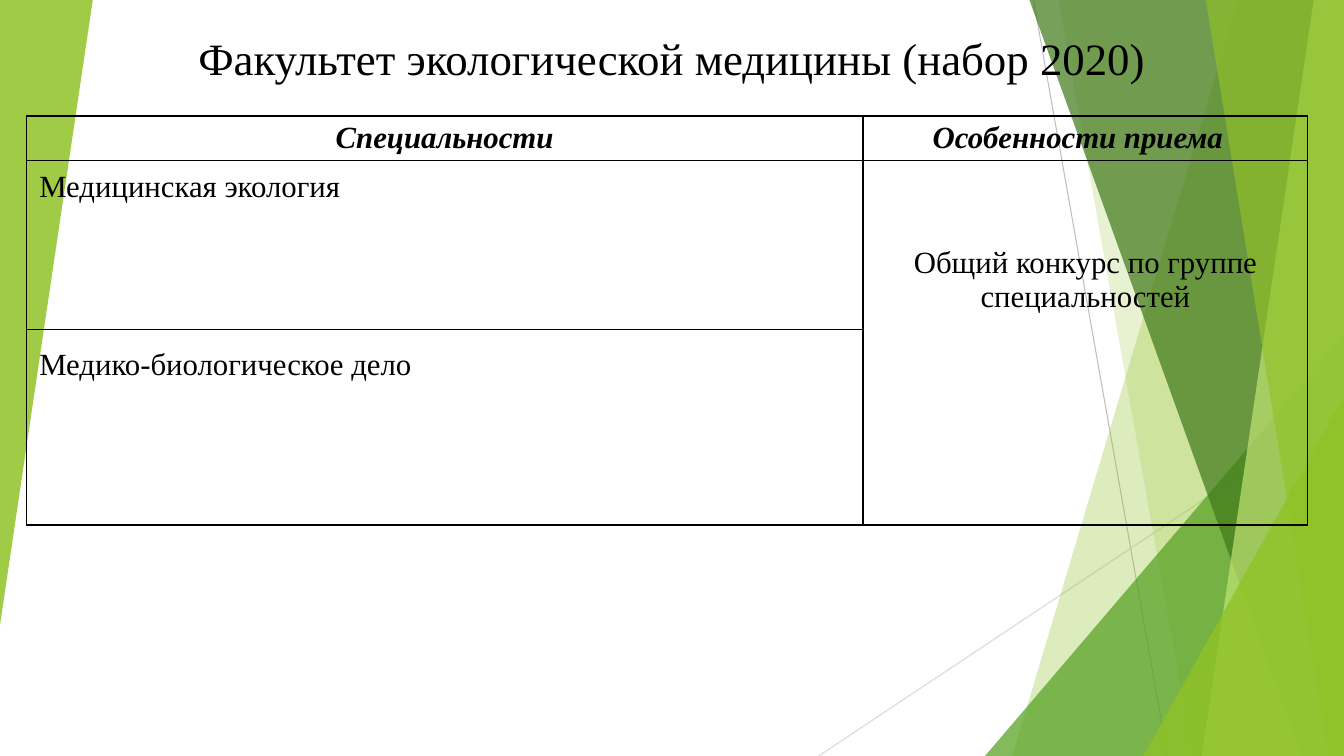
from dataclasses import dataclass

from lxml.etree import SubElement
from pptx import Presentation
from pptx.dml.color import RGBColor
from pptx.enum.shapes import MSO_CONNECTOR, MSO_SHAPE
from pptx.enum.text import MSO_ANCHOR, PP_ALIGN
from pptx.oxml.ns import qn
from pptx.util import Inches, Pt

WIDTH, HEIGHT = 13.33, 7.5
FONT = "Times New Roman"
BLACK = "000000"
GREEN = "90C226"


@dataclass
class Ray:
    start: tuple[float, float]
    end: tuple[float, float]
    color: str


@dataclass
class Band:
    """A strip that reaches the right edge of the slide; its left side slants."""
    top_x: float
    bottom_x: float
    color: str
    opacity: int


@dataclass
class Wedge:
    left: float
    top: float
    width: float
    height: float
    color: str
    opacity: int
    rotation: int = 0


@dataclass
class CellText:
    row: int
    column: int
    text: str
    align: PP_ALIGN = PP_ALIGN.CENTER
    top: float = 0.05
    right: float = 0.13
    heading: bool = False


DECORATION = [
    Ray((10.25, 0), (11.58, HEIGHT), "BFBFBF"),
    Ray((WIDTH, 4.03), (8.12, HEIGHT), "D9D9D9"),
    Band(12.28, 10.04, GREEN, 30),
    Band(10.5, 11.83, GREEN, 20),
    Wedge(9.77, 3.33, 3.56, 4.17, "54A021", 72),
    Band(10.21, 12.91, "3F7819", 70),
    Band(13.03, 11.92, "C0E474", 70),
    Band(11.96, 13.18, GREEN, 65),
    Wedge(11.34, 3.93, 1.99, 3.57, GREEN, 80),
    Wedge(0, 0, 0.92, 6.2, GREEN, 85, rotation=180),
]
COLUMNS = [8.3, 4.41]
ROWS = [0.43, 1.68, 1.94]
CELLS = [
    CellText(0, 0, "Специальности", heading=True),
    CellText(0, 1, "Особенности приема", right=0.28, heading=True),
    CellText(1, 0, "Медицинская экология", PP_ALIGN.LEFT, top=0.1),
    CellText(1, 1, "Общий конкурс по группе специальностей", top=0.85),
    CellText(2, 0, "Медико-биологическое дело", PP_ALIGN.LEFT, top=0.19),
]


def rgb(color: str) -> RGBColor:
    return RGBColor.from_string(color)


def paint(shape, color: str, opacity: int) -> None:
    shape.shadow.inherit = False
    shape.line.fill.background()
    shape.fill.solid()
    shape.fill.fore_color.rgb = rgb(color)
    tint = next(shape.element.spPr.iter(qn("a:srgbClr")))
    SubElement(tint, qn("a:alpha"), val=str(opacity * 1000))


def draw_ray(page, ray: Ray) -> None:
    line = page.shapes.add_connector(
        MSO_CONNECTOR.STRAIGHT, *map(Inches, ray.start + ray.end))
    line.line.color.rgb = rgb(ray.color)
    line.line.width = Pt(0.75)
    SubElement(line.element.spPr, qn("a:effectLst"))


def draw_band(page, band: Band) -> None:
    outline = page.shapes.build_freeform(Inches(band.top_x), 0)
    corners = [(WIDTH, 0), (WIDTH, HEIGHT), (band.bottom_x, HEIGHT)]
    outline.add_line_segments([(Inches(x), Inches(y)) for x, y in corners])
    paint(outline.convert_to_shape(), band.color, band.opacity)


def draw_wedge(page, wedge: Wedge) -> None:
    box = map(Inches, (wedge.left, wedge.top, wedge.width, wedge.height))
    shape = page.shapes.add_shape(MSO_SHAPE.ISOSCELES_TRIANGLE, *box)
    shape.adjustments[0] = 1
    shape.rotation = wedge.rotation
    paint(shape, wedge.color, wedge.opacity)


def set_font(paragraph, size: int, emphasis: bool = False) -> None:
    font = paragraph.font
    font.name, font.size = FONT, Pt(size)
    font.bold = font.italic = emphasis
    font.color.rgb = rgb(BLACK)


def add_title(page) -> None:
    title = page.shapes.title
    page.shapes.element.append(title.element)  # above the decoration
    title.left, title.top = 0, Inches(0.21)
    title.width, title.height = Inches(WIDTH), Inches(0.68)
    frame = title.text_frame
    frame.text = "Факультет экологической медицины (набор 2020)"
    frame.vertical_anchor = MSO_ANCHOR.BOTTOM
    frame.paragraphs[0].alignment = PP_ALIGN.CENTER
    set_font(frame.paragraphs[0], 32)


def add_borders(cell) -> None:
    properties = cell._tc.get_or_add_tcPr()
    for position, side in enumerate(("a:lnL", "a:lnR", "a:lnT", "a:lnB")):
        border = properties.makeelement(qn(side), {"w": str(Pt(1))})
        fill = SubElement(border, qn("a:solidFill"))
        SubElement(fill, qn("a:srgbClr"), val=BLACK)
        properties.insert(position, border)


def fill_cell(cell, content: CellText) -> None:
    cell.margin_left, cell.margin_right = Inches(0.13), Inches(content.right)
    cell.margin_top, cell.margin_bottom = Inches(content.top), Inches(0.05)
    cell.vertical_anchor = MSO_ANCHOR.TOP
    cell.text = content.text
    paragraph = cell.text_frame.paragraphs[0]
    paragraph.alignment = content.align
    set_font(paragraph, 22, content.heading)


def add_admission_table(page) -> None:
    table = page.shapes.add_table(
        len(ROWS), len(COLUMNS), Inches(0.26), Inches(1.15),
        Inches(sum(COLUMNS)), Inches(sum(ROWS))).table
    table.first_row = table.horz_banding = False
    for column, width in zip(table.columns, COLUMNS):
        column.width = Inches(width)
    for row, height in zip(table.rows, ROWS):
        row.height = Inches(height)
    for cell in table.iter_cells():
        cell.fill.background()
        add_borders(cell)
    table.cell(1, 1).merge(table.cell(2, 1))
    for content in CELLS:
        fill_cell(table.cell(content.row, content.column), content)


def main() -> None:
    deck = Presentation()
    deck.slide_width, deck.slide_height = Inches(WIDTH), Inches(HEIGHT)
    page = deck.slides.add_slide(deck.slide_layouts.get_by_name("Title Only"))
    painters = {Ray: draw_ray, Band: draw_band, Wedge: draw_wedge}
    for item in DECORATION:
        painters[type(item)](page, item)
    add_title(page)
    add_admission_table(page)
    deck.save("out.pptx")


if __name__ == "__main__":
    main()
